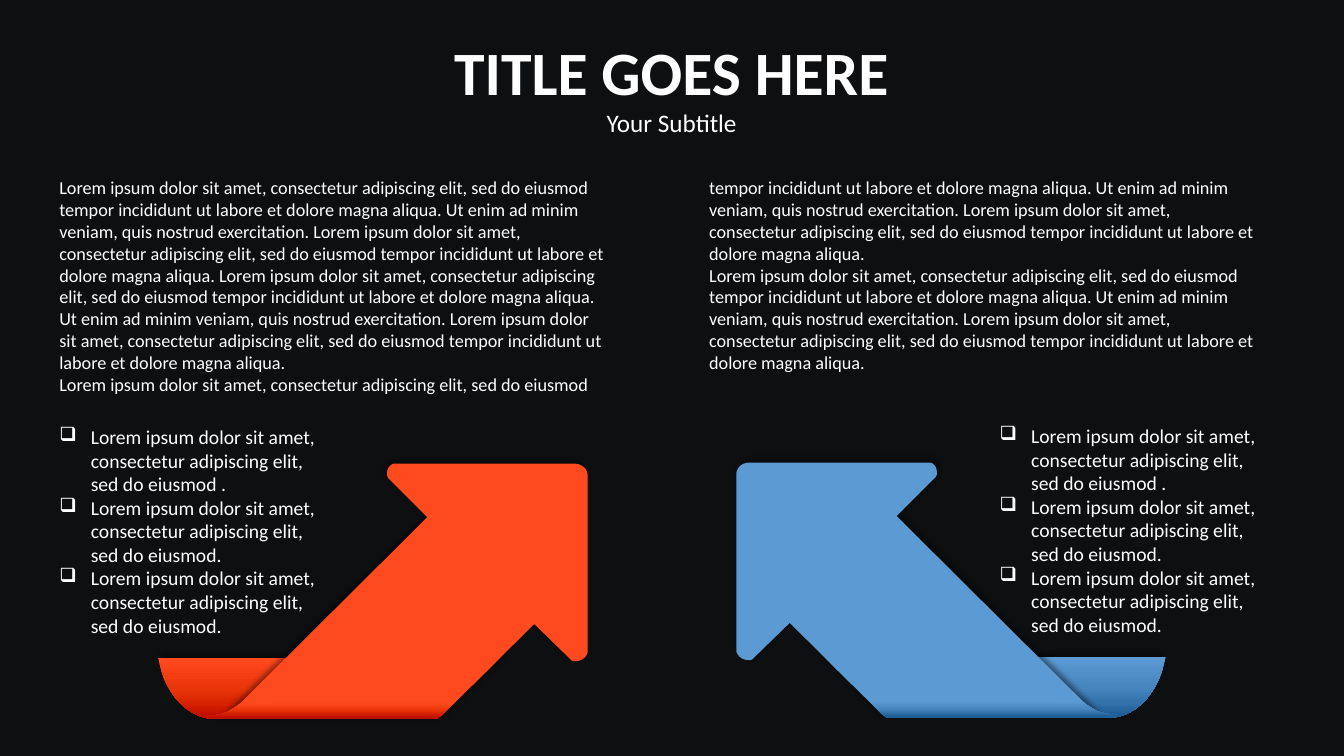
from lxml import etree
from pptx import Presentation
from pptx.dml.color import RGBColor
from pptx.enum.text import MSO_ANCHOR, PP_ALIGN
from pptx.oxml.ns import qn
from pptx.util import Pt

CENTER = PP_ALIGN.CENTER
TOP = MSO_ANCHOR.TOP
FONT = "Calibri"
COLORS = {"background": "0E0F11", "text": "FFFFFF", "shadow": "000000",
          "red": "FE4A1E", "blue": "5C9AD3"}
FOLD_SHADES = {
    "red": [(0, "FE4A1E"), (50, "EA360A"), (75, "D62200"), (95, "C20E00")],
    "blue": [(0, "5C9AD3"), (50, "4886BF"), (75, "3472AB"), (95, "205E97")],
}

# Outlines of the left arrow in points: pairs are corners, six numbers a curve.
TAIL = [(113, 470), (357, 470), (329, 497.5), (312.5, 513.4), (150.5, 513.4),
        (146.2, 512.6), (132.5, 509, 121.7, 497.5, 115.9, 481)]
ARROW = [(282, 331.2), (410.4, 331.2),
         (415.4, 331.2, 419.8, 334.8, 419.8, 339.8), (419.8, 465.8),
         (419, 469.4, 415.4, 472.3, 411.1, 472.3),
         (409.7, 472.3, 409, 472.3, 408.2, 471.6),
         (381.6, 445.7), (367.2, 460), (316.1, 510.5), (314.6, 511.2),
         (309.6, 512.6), (161.3, 512.6), (305.3, 369.4), (277.2, 341.3),
         (276.5, 339.8), (276.5, 338.4),
         (276.5, 334.8, 278, 332.6, 280.8, 331.2)]
FOLD = [(190, 501.8), (324.7, 501.8), (315.4, 511.2), (310.3, 512.6),
        (147.6, 512.6), (147.6, 511.2), (148.3, 511.2),
        (152.6, 511.2, 157, 510.5, 161.3, 509),
        (164.2, 507.6, 167.8, 505.4, 170.6, 503.3), (171.4, 502.6),
        (190, 502.6)]
MIRROR_SUM = 945.7
MIRROR_RISE = 0.8

OPENING = "Lorem ipsum dolor sit amet, consectetur adipiscing elit, sed do eiusmod"
LABORE = " tempor incididunt ut labore et dolore magna aliqua."
PASSAGE = (OPENING + LABORE + " Ut enim ad minim veniam, quis nostrud exercitation. "
           + OPENING + LABORE)
BODY = [PASSAGE + " " + PASSAGE, PASSAGE, PASSAGE]
POINTS = [OPENING + " .", OPENING + ".", OPENING + "."]


def rgb(name):
    return RGBColor.from_string(COLORS[name])


def style(paragraph, size, bold=False):
    font = paragraph.font
    font.name, font.size, font.bold = FONT, Pt(size), bold
    font.color.rgb = rgb("text")


def flatten(outline, steps=10):
    """Turn corners and Bezier curves into a list of plain points."""
    points = []
    for part in outline:
        if len(part) == 2:
            points.append(part)
            continue
        x0, y0 = points[-1]
        x1, y1, x2, y2, x3, y3 = part
        for step in range(1, steps + 1):
            t = step / steps
            a, b, c, d = (1 - t) ** 3, 3 * t * (1 - t) ** 2, 3 * t * t * (1 - t), t ** 3
            points.append((a * x0 + b * x1 + c * x2 + d * x3,
                           a * y0 + b * y1 + c * y2 + d * y3))
    return points


def add_outline(slide, outline, mirrored):
    points = flatten(outline)
    if mirrored:
        points = [(MIRROR_SUM - x, y - MIRROR_RISE) for x, y in points]
    points = [(Pt(x), Pt(y)) for x, y in points]
    builder = slide.shapes.build_freeform(*points[0], scale=1.0)
    builder.add_line_segments(points[1:], close=True)
    shape = builder.convert_to_shape()
    shape.line.fill.background()
    shape.shadow.inherit = False
    return shape


def shade(shape, stops):
    """Fill with a gradient running from top to bottom."""
    shape.fill.gradient()
    shape.fill.gradient_angle = 270
    stop_list = shape.element.spPr.find(qn("a:gradFill")).find(qn("a:gsLst"))
    for old in list(stop_list):
        stop_list.remove(old)
    for percent, color in stops:
        stop = etree.SubElement(stop_list, qn("a:gs"), pos=str(percent * 1000))
        etree.SubElement(stop, qn("a:srgbClr"), val=color)


def cast_shadow(shape, degrees):
    effects = shape.element.spPr.find(qn("a:effectLst"))
    shadow = etree.SubElement(effects, qn("a:outerShdw"), blurRad=str(Pt(4)),
                              dist=str(Pt(3)), dir=str(degrees * 60000),
                              algn="ctr", rotWithShape="0")
    color = etree.SubElement(shadow, qn("a:srgbClr"), val=COLORS["shadow"])
    etree.SubElement(color, qn("a:alpha"), val="40000")


def add_folded_arrow(slide, color, mirrored=False):
    tail_angle, arrow_angle = (225, 315) if mirrored else (315, 225)
    tail = add_outline(slide, TAIL, mirrored)
    shade(tail, FOLD_SHADES[color])
    cast_shadow(tail, tail_angle)
    arrow = add_outline(slide, ARROW, mirrored)
    arrow.fill.solid()
    arrow.fill.fore_color.rgb = rgb(color)
    cast_shadow(arrow, arrow_angle)
    shade(add_outline(slide, FOLD, mirrored), FOLD_SHADES[color])


def add_bullet(paragraph):
    properties = paragraph._p.get_or_add_pPr()
    properties.set("marL", str(Pt(22.5)))
    properties.set("indent", str(Pt(-22.5)))
    etree.SubElement(properties, qn("a:buChar"), char="❑")


def add_text(slide, left, top, width, height, texts, size, bulleted=False):
    frame = slide.shapes.add_textbox(Pt(left), Pt(top), Pt(width), Pt(height)).text_frame
    frame.word_wrap = True
    frame.vertical_anchor = TOP
    for index, text in enumerate(texts):
        paragraph = frame.add_paragraph() if index else frame.paragraphs[0]
        paragraph.text = text
        if bulleted:
            add_bullet(paragraph)
        style(paragraph, size)
    return frame


def set_title(slide, heading, subtitle):
    title = slide.shapes.title
    title.left, title.top, title.width, title.height = Pt(263), Pt(20), Pt(433.5), Pt(82.5)
    frame = title.text_frame
    frame.text = heading
    frame.add_paragraph().text = subtitle
    for paragraph, size, bold in zip(frame.paragraphs, (44, 18), (True, False)):
        paragraph.alignment = CENTER
        style(paragraph, size, bold)


def main():
    deck = Presentation()
    deck.slide_width, deck.slide_height = Pt(960), Pt(540)
    slide = deck.slides.add_slide(deck.slide_layouts[5])
    slide.background.fill.solid()
    slide.background.fill.fore_color.rgb = rgb("background")

    set_title(slide, "TITLE GOES HERE", "Your Subtitle")
    add_folded_arrow(slide, "red")
    add_folded_arrow(slide, "blue", mirrored=True)
    for left, top in ((35.3, 300.2), (707, 299.5)):
        add_text(slide, left, top, 211, 160, POINTS, 14, bulleted=True)
    body = add_text(slide, 35.3, 122.4, 870.5, 165, BODY, 13)
    columns = body._txBody.bodyPr
    columns.set("numCol", "2")
    columns.set("spcCol", str(Pt(72)))

    deck.save("out.pptx")


if __name__ == "__main__":
    main()
